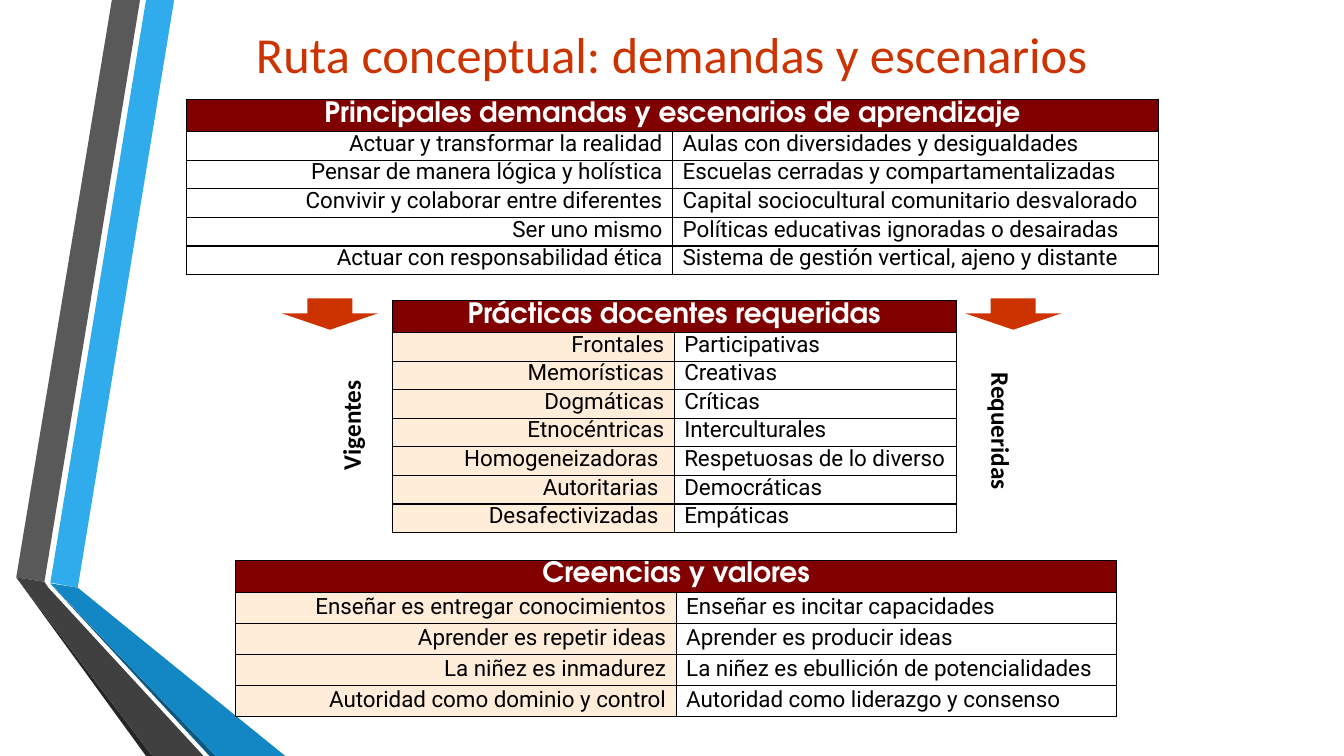
from lxml import etree
from pptx import Presentation
from pptx.dml.color import RGBColor
from pptx.enum.shapes import MSO_SHAPE
from pptx.enum.text import MSO_ANCHOR, PP_ALIGN
from pptx.oxml.ns import qn
from pptx.util import Cm, Pt

LEFT, CENTER, RIGHT = PP_ALIGN.LEFT, PP_ALIGN.CENTER, PP_ALIGN.RIGHT
MIDDLE = MSO_ANCHOR.MIDDLE
DOWN_ARROW = MSO_SHAPE.DOWN_ARROW
TITLE_ONLY = 5

BLACK = RGBColor(0x00, 0x00, 0x00)
WHITE = RGBColor(0xFF, 0xFF, 0xFF)
ORANGE = RGBColor(0xCC, 0x33, 0x00)
MAROON = RGBColor(0x80, 0x00, 0x00)
PEACH = RGBColor(0xFF, 0xEC, 0xD9)
SKY = RGBColor(0x30, 0xAC, 0xEC)
BLUE = RGBColor(0x12, 0x87, 0xC3)
NAVY = RGBColor(0x0C, 0x5A, 0x82)
GREY = RGBColor(0x59, 0x59, 0x59)
CHARCOAL = RGBColor(0x40, 0x40, 0x40)
DARK = RGBColor(0x26, 0x26, 0x26)

HEADER_HEIGHT = 0.81

# Side ribbons: colour and outline in centimetres
RIBBONS = [
    (SKY, [(1.27, 14.68), (1.96, 14.81), (4.39, 0), (3.68, 0)]),
    (GREY, [(3.53, 0), (2.82, 0), (0.41, 14.55), (1.12, 14.66)]),
    (DARK, [(0.41, 14.55), (3.68, 19.05), (3.84, 19.05)]),
    (NAVY, [(1.27, 14.71), (5.28, 19.05), (5.44, 19.05)]),
    (BLUE, [(1.27, 14.7), (5.44, 19.05), (7.19, 19.05), (1.96, 14.81)]),
    (CHARCOAL, [(5.13, 19.05), (1.22, 14.81), (1.12, 14.66), (0.41, 14.55),
                (3.84, 19.05)]),
]

DEMANDS = [
    ("Actuar y transformar la realidad", "Aulas con diversidades y desigualdades"),
    ("Pensar de manera lógica y holística", "Escuelas cerradas y compartamentalizadas"),
    ("Convivir y colaborar entre diferentes",
     "Capital sociocultural comunitario desvalorado"),
    ("Ser uno mismo", "Políticas educativas ignoradas o desairadas"),
    ("Actuar con responsabilidad ética",
     "Sistema de gestión vertical, ajeno y distante"),
]
PRACTICES = [
    ("Frontales", "Participativas"),
    ("Memorísticas", "Creativas"),
    ("Dogmáticas", "Críticas"),
    ("Etnocéntricas", "Interculturales"),
    ("Homogeneizadoras ", "Respetuosas de lo diverso"),
    ("Autoritarias ", "Democráticas"),
    ("Desafectivizadas ", "Empáticas"),
]
BELIEFS = [
    ("Enseñar es entregar conocimientos", "Enseñar es incitar capacidades"),
    ("Aprender es repetir ideas", "Aprender es producir ideas"),
    ("La niñez es inmadurez", "La niñez es ebullición de potencialidades"),
    ("Autoridad como dominio y control", "Autoridad como liderazgo y consenso"),
]


def write_text(frame, text, size, font="Calibri", color=BLACK, bold=False,
               align=CENTER, spacing=None):
    para = frame.paragraphs[0]
    para.alignment = align
    if spacing:
        para.line_spacing = spacing
    span = para.add_run()
    span.text = text
    span.font.size = Pt(size)
    span.font.name = font
    span.font.bold = bold
    span.font.color.rgb = color


def paint(shape, color):
    shape.shadow.inherit = False
    shape.fill.solid()
    shape.fill.fore_color.rgb = color
    shape.line.fill.background()


def add_ribbon(page, color, points):
    corners = [(Cm(x), Cm(y)) for x, y in points]
    builder = page.shapes.build_freeform(*corners[0])
    builder.add_line_segments(corners[1:])
    paint(builder.convert_to_shape(), color)


def add_arrow(page, left):
    arrow = page.shapes.add_shape(DOWN_ARROW, Cm(left), Cm(7.52), Cm(2.41), Cm(0.79))
    arrow.adjustments[0] = 0.47
    arrow.adjustments[1] = 0.52
    paint(arrow, ORANGE)


def add_side_label(page, text, left, top, width, rotation, align):
    box = page.shapes.add_textbox(Cm(left), Cm(top), Cm(width), Cm(1.02))
    box.rotation = rotation
    box.text_frame.word_wrap = True
    write_text(box.text_frame, text, 18, bold=True, align=align)


def set_borders(cell, widths):
    properties = cell._tc.get_or_add_tcPr()
    for side, width in zip("LRTB", widths):
        line = etree.SubElement(properties, qn(f"a:ln{side}"), w=str(Pt(width)))
        fill = etree.SubElement(line, qn("a:solidFill"))
        etree.SubElement(fill, qn("a:srgbClr"), val=str(BLACK))


def add_pair_table(page, heading, pairs, left, top, width, row_height, spacing,
                   left_fill):
    table = page.shapes.add_table(
        len(pairs) + 1, 2, Cm(left), Cm(top), Cm(width),
        Cm(HEADER_HEIGHT + row_height * len(pairs))).table
    table.first_row = table.horz_banding = False
    for column in table.columns:
        column.width = Cm(width / 2)
    for number, row in enumerate(table.rows):
        row.height = Cm(row_height if number else HEADER_HEIGHT)

    # Thin outer frame, thicker inner rules
    for number in range(len(pairs) + 1):
        for side in range(2):
            cell = table.cell(number, side)
            set_borders(cell, (1 if side else 0.5, 0.5 if side else 1,
                               1 if number else 0.5,
                               1 if number < len(pairs) else 0.5))
            cell.fill.solid()
            body_fill = WHITE if side else left_fill
            cell.fill.fore_color.rgb = body_fill if number else MAROON
            if number:
                write_text(cell.text_frame, pairs[number - 1][side], 16, "Roboto",
                           align=LEFT if side else RIGHT, spacing=spacing)

    header = table.cell(0, 0)
    header.merge(table.cell(0, 1))
    write_text(header.text_frame, heading, 20, "TeX Gyre Adventor", WHITE,
               bold=True, spacing=0.85)


def add_title(page, text):
    title = page.shapes.title
    title.left, title.top, title.width, title.height = (
        Cm(5.13), Cm(0.76), Cm(23.6), Cm(1.17))
    title.text_frame.vertical_anchor = MIDDLE
    write_text(title.text_frame, text, 36, color=ORANGE)


def main():
    deck = Presentation()
    deck.slide_width, deck.slide_height = Cm(33.87), Cm(19.05)
    page = deck.slides.add_slide(deck.slide_layouts[TITLE_ONLY])

    # Background ribbons and title
    for color, points in RIBBONS:
        add_ribbon(page, color, points)
    add_title(page, "Ruta conceptual: demandas y escenarios")

    # Three levels of the route
    add_pair_table(page, "Principales demandas y escenarios de aprendizaje", DEMANDS,
                   4.7, 2.51, 24.5, 0.72, 0.7, WHITE)
    add_pair_table(page, "Prácticas docentes requeridas", PRACTICES,
                   9.88, 7.57, 14.22, 0.72, 0.7, PEACH)
    add_pair_table(page, "Creencias y valores", BELIEFS,
                   5.94, 14.12, 22.2, 0.78, 0.8, PEACH)

    # Arrows and side labels
    for left in (7.11, 24.33):
        add_arrow(page, left)
    add_side_label(page, "Vigentes", 7.04, 10.21, 3.61, 270, CENTER)
    add_side_label(page, "Requeridas", 23.24, 10.62, 3.99, 90, LEFT)

    deck.save("out.pptx")


if __name__ == "__main__":
    main()
